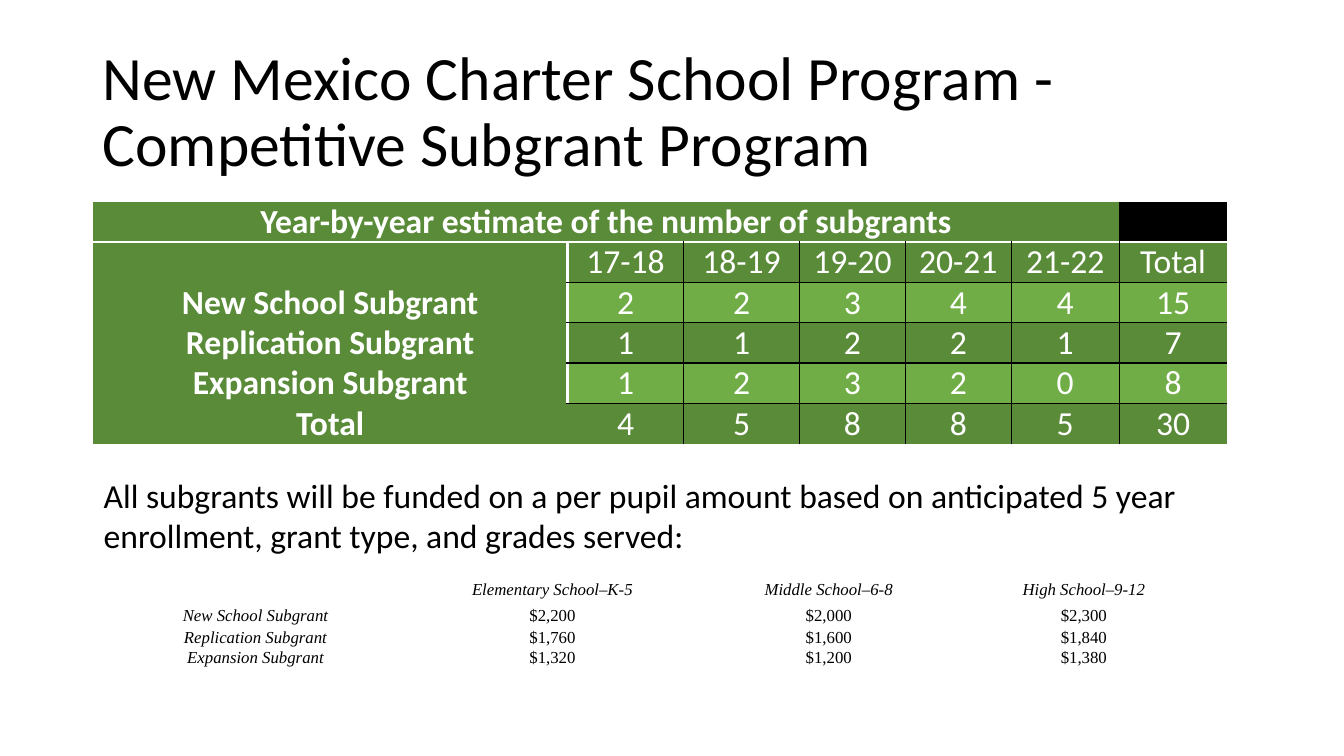
"""Build the slide on the competitive subgrant program with its two tables."""
from lxml import etree
from pptx import Presentation
from pptx.dml.color import RGBColor
from pptx.enum.text import MSO_ANCHOR, PP_ALIGN
from pptx.oxml.ns import qn
from pptx.util import Inches, Pt

MIDDLE, TOP = MSO_ANCHOR.MIDDLE, MSO_ANCHOR.TOP
CENTER = PP_ALIGN.CENTER
BLACK = RGBColor(0x00, 0x00, 0x00)
WHITE = RGBColor(0xFF, 0xFF, 0xFF)
DARK_GREEN = RGBColor(0x5A, 0x8B, 0x39)
LIGHT_GREEN = RGBColor(0x70, 0xAD, 0x47)
BLACK_LINE, WHITE_LINE = (BLACK, 1), (WHITE, 2)

SUBGRANT_COLUMNS = [4.71, 1.15, 1.15, 1.05, 1.05, 1.07, 1.07]
SUBGRANTS = [
    ["Year-by-year estimate of the number of subgrants", "", "", "", "", "", ""],
    ["", "17-18", "18-19", "19-20", "20-21", "21-22", "Total"],
    ["New School Subgrant", "2", "2", "3", "4", "4", "15"],
    ["Replication Subgrant", "1", "1", "2", "2", "1", "7"],
    ["Expansion Subgrant", "1", "2", "3", "2", "0", "8"],
    ["Total", "4", "5", "8", "8", "5", "30"],
]
FUNDING_COLUMNS = [2.89, 3, 2.48, 2.58]
FUNDING_ROWS = [0.25, 0.25, 0.2, 0.2]
FUNDING = [
    ["", "Elementary School–K-5", "Middle School–6-8", "High School–9-12"],
    ["New School Subgrant", "$2,200", "$2,000", "$2,300"],
    ["Replication Subgrant", "$1,760", "$1,600", "$1,840"],
    ["Expansion Subgrant", "$1,320", "$1,200", "$1,380"],
]


def write_text(paragraph, text, size, color, name="Calibri", bold=False, italic=False):
    if not text:
        etree.SubElement(paragraph._p, qn("a:endParaRPr"), sz=str(size * 100))
        return
    run = paragraph.add_run()
    run.text = text
    run.font.size = Pt(size)
    run.font.name = name
    run.font.color.rgb = color
    run.font.bold = bold
    run.font.italic = italic


def add_grid(left, top, widths, heights):
    frame = slide.shapes.add_table(len(heights), len(widths), Inches(left), Inches(top),
                                   Inches(sum(widths)), Inches(sum(heights)))
    table = frame.table
    table.first_row = table.horz_banding = False
    for column, width in zip(table.columns, widths):
        column.width = Inches(width)
    for row, height in zip(table.rows, heights):
        row.height = Inches(height)
    for cell in table.iter_cells():
        cell.margin_left = cell.margin_right = Inches(0.07)
        cell.margin_top = cell.margin_bottom = 0
        cell.vertical_anchor = MIDDLE
        cell.text_frame.paragraphs[0].alignment = CENTER
    return table


presentation = Presentation()
presentation.slide_width = Inches(13.33)
presentation.slide_height = Inches(7.5)
slide = presentation.slides.add_slide(presentation.slide_layouts[6])

for box, text, size, anchor, spacing in [
    ((0.92, 0.4, 11.5, 1.45),
     "New Mexico Charter School Program - Competitive Subgrant Program", 44, MIDDLE, 0.9),
    ((0.93, 4.66, 11.26, 1.21),
     "All subgrants will be funded on a per pupil amount based on anticipated 5 year "
     "enrollment, grant type, and grades served:", 24, TOP, 1.0),
]:
    text_frame = slide.shapes.add_textbox(*map(Inches, box)).text_frame
    text_frame.word_wrap = True
    text_frame.vertical_anchor = anchor
    text_frame.paragraphs[0].line_spacing = spacing
    write_text(text_frame.paragraphs[0], text, size, BLACK)

last_row, last_column = len(SUBGRANTS) - 1, len(SUBGRANT_COLUMNS) - 1

vertical_lines = {(row, column): BLACK_LINE
                  for row in range(1, last_row + 1) for column in range(2, last_column + 1)}
vertical_lines.update({(row, 1): WHITE_LINE for row in range(1, last_row)})
horizontal_lines = {(row, column): BLACK_LINE
                    for row in range(2, last_row + 1) for column in range(1, last_column + 1)}
horizontal_lines.update({(1, column): WHITE_LINE for column in range(last_column + 1)})

subgrant_table = add_grid(0.92, 2, SUBGRANT_COLUMNS, [0.4] * len(SUBGRANTS))
subgrant_table.cell(0, 0).merge(subgrant_table.cell(0, last_column - 1))
for row, values in enumerate(SUBGRANTS):
    for column, value in enumerate(values):
        cell = subgrant_table.cell(row, column)
        borders = {
            "a:lnL": vertical_lines.get((row, column)),
            "a:lnR": vertical_lines.get((row, column + 1)),
            "a:lnT": horizontal_lines.get((row, column)),
            "a:lnB": horizontal_lines.get((row + 1, column)),
        }
        for tag, border in borders.items():
            line = etree.SubElement(cell._tc.get_or_add_tcPr(), qn(tag))
            if border:
                color, width = border
                line.set("w", str(Pt(width)))
                line_fill = etree.SubElement(line, qn("a:solidFill"))
                etree.SubElement(line_fill, qn("a:srgbClr"), val=str(color))
            else:
                etree.SubElement(line, qn("a:noFill"))
        cell.fill.solid()
        if row == 0 and column == last_column:
            cell.fill.fore_color.rgb = BLACK
        elif column > 0 and row in (2, 4):
            cell.fill.fore_color.rgb = LIGHT_GREEN
        else:
            cell.fill.fore_color.rgb = DARK_GREEN
        write_text(cell.text_frame.paragraphs[0], value, 24, WHITE, bold=column == 0)

funding_table = add_grid(1.09, 5.73, FUNDING_COLUMNS, FUNDING_ROWS)
for row, values in enumerate(FUNDING):
    for column, value in enumerate(values):
        cell = funding_table.cell(row, column)
        cell.fill.background()
        write_text(cell.text_frame.paragraphs[0], value, 12, BLACK, "Times New Roman",
                   italic=row == 0 or column == 0)

presentation.save("out.pptx")
